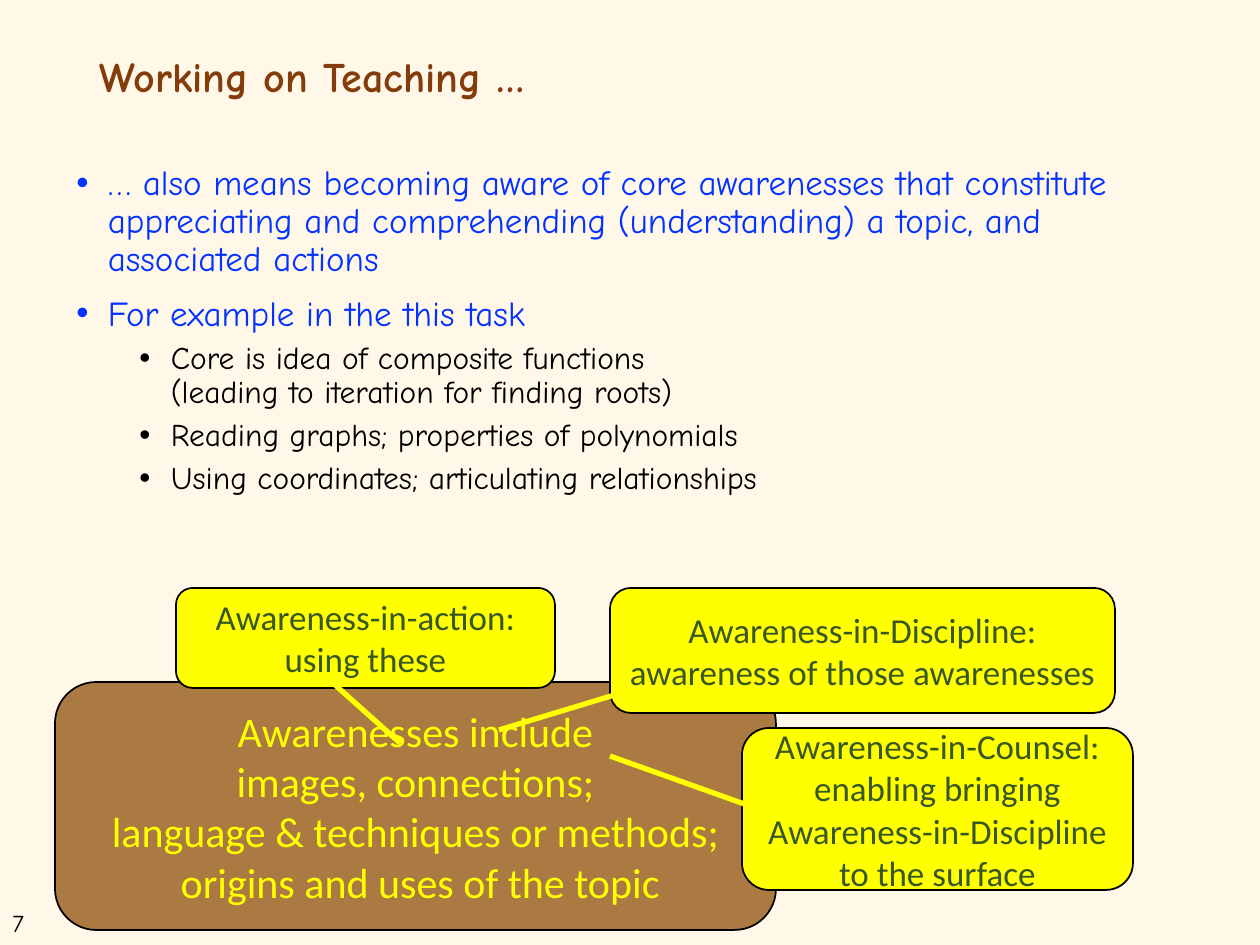
from pptx import Presentation
from pptx.dml.color import RGBColor
from pptx.enum.shapes import MSO_CONNECTOR, MSO_SHAPE
from pptx.enum.text import MSO_ANCHOR, MSO_AUTO_SIZE, PP_ALIGN
from pptx.oxml.ns import qn
from pptx.util import Inches, Pt
from lxml.etree import SubElement

COLORS = {
    "background": "FFF8E9", "title": "843C0B", "point": "0432FF", "black": "000000",
    "topic": "AB7942", "yellow": "FFFF00", "callout_text": "385723",
}
HEADING_FONT = "Comic Neue"
BOX_FONT = "Calibri"

TITLE = ("Working on Teaching …", (87, 50, 1086, 90))
PAGE_NUMBER = ("7", (0, 902, 64, 43))
BODY_BOX = (64, 159, 1144, 310)
POINTS = [
    (0, "… also means becoming aware of core awarenesses that constitute "
        "appreciating and comprehending (understanding) a topic, and associated actions"),
    (0, "For example in the this task"),
    (1, "Core is idea of composite functions \n(leading to iteration for finding roots)"),
    (1, "Reading graphs; properties of polynomials"),
    (1, "Using coordinates; articulating relationships"),
]
LEVELS = [
    {"size": 20, "color": "point", "margin": 0.25, "before": 10},
    {"size": 18, "color": "black", "margin": 0.75, "before": 5},
]
TOPIC = (
    ["Awarenesses include", " images, connections; ",
     "language & techniques or methods;", " origins and uses of the topic"],
    (55, 682, 721, 248),
)
CALLOUTS = [
    (["Awareness-in-action:", "using these"],
     (176, 588, 379, 100), (334, 684, 400, 743)),
    (["Awareness-in-Discipline:", "awareness of those awarenesses"],
     (610, 588, 505, 125), (621, 693, 499, 730)),
    (["Awareness-in-Counsel:", "enabling bringing Awareness-in-Discipline to the surface"],
     (742, 728, 391, 162), (747, 805, 610, 756)),
]


def px(lengths):
    return [round(length * Inches(1) / 126) for length in lengths]


def rgb(name):
    return RGBColor.from_string(COLORS[name])


def add_run(paragraph, text, font, size, color, bold=False):
    run = paragraph.add_run()
    run.text = text
    run.font.name = font
    run.font.size = Pt(size)
    run.font.bold = bold
    run.font.color.rgb = rgb(color)


def next_paragraph(frame, index):
    return frame.add_paragraph() if index else frame.paragraphs[0]


def add_title(slide):
    text, box = TITLE
    title = slide.shapes.title
    title.left, title.top, title.width, title.height = px(box)
    frame = title.text_frame
    frame.auto_size = MSO_AUTO_SIZE.NONE
    frame.vertical_anchor = MSO_ANCHOR.TOP
    paragraph = frame.paragraphs[0]
    paragraph.alignment = PP_ALIGN.LEFT
    paragraph.line_spacing = 0.9
    add_run(paragraph, text, HEADING_FONT, 24, "title", True)


def add_page_number(slide):
    text, box = PAGE_NUMBER
    frame = slide.shapes.add_textbox(*px(box)).text_frame
    frame.word_wrap = False
    add_run(frame.paragraphs[0], text, HEADING_FONT, 14, "black")


def add_points(slide):
    frame = slide.shapes.add_textbox(*px(BODY_BOX)).text_frame
    frame.word_wrap = True
    for index, (level, text) in enumerate(POINTS):
        style = LEVELS[level]
        paragraph = next_paragraph(frame, index)
        paragraph.level = level
        paragraph.line_spacing = 0.9
        paragraph.space_before = Pt(style["before"])
        properties = paragraph._p.get_or_add_pPr()
        properties.set("marL", str(Inches(style["margin"])))
        properties.set("indent", str(Inches(-0.25)))
        SubElement(properties, qn("a:buFont")).set("typeface", "Arial")
        SubElement(properties, qn("a:buChar")).set("char", "•")
        for line_index, line in enumerate(text.split("\n")):
            if line_index:
                paragraph.add_line_break()
            add_run(paragraph, line, HEADING_FONT, style["size"], style["color"])


def add_box(slide, lines, box, fill, size, color):
    shape = slide.shapes.add_shape(MSO_SHAPE.ROUNDED_RECTANGLE, *px(box))
    shape.shadow.inherit = False
    shape.fill.solid()
    shape.fill.fore_color.rgb = rgb(fill)
    shape.line.color.rgb = rgb("black")
    shape.line.width = Pt(1)
    frame = shape.text_frame
    frame.word_wrap = True
    frame.vertical_anchor = MSO_ANCHOR.MIDDLE
    for index, line in enumerate(lines):
        paragraph = next_paragraph(frame, index)
        paragraph.alignment = PP_ALIGN.CENTER
        add_run(paragraph, line, BOX_FONT, size, color)


def add_pointer(slide, ends):
    pointer = slide.shapes.add_connector(MSO_CONNECTOR.STRAIGHT, *px(ends))
    pointer.line.color.rgb = rgb("yellow")
    pointer.line.width = Pt(3)
    SubElement(pointer._element.spPr, qn("a:effectLst"))


def main():
    presentation = Presentation()
    presentation.slide_width, presentation.slide_height = px((1260, 945))
    slide = presentation.slides.add_slide(presentation.slide_layouts[5])
    slide.background.fill.solid()
    slide.background.fill.fore_color.rgb = rgb("background")
    add_title(slide)
    add_page_number(slide)
    add_points(slide)
    add_box(slide, *TOPIC, "topic", 24, "yellow")
    for lines, box, ends in CALLOUTS:
        add_box(slide, lines, box, "yellow", 20, "callout_text")
        add_pointer(slide, ends)
    presentation.save("out.pptx")


if __name__ == "__main__":
    main()
